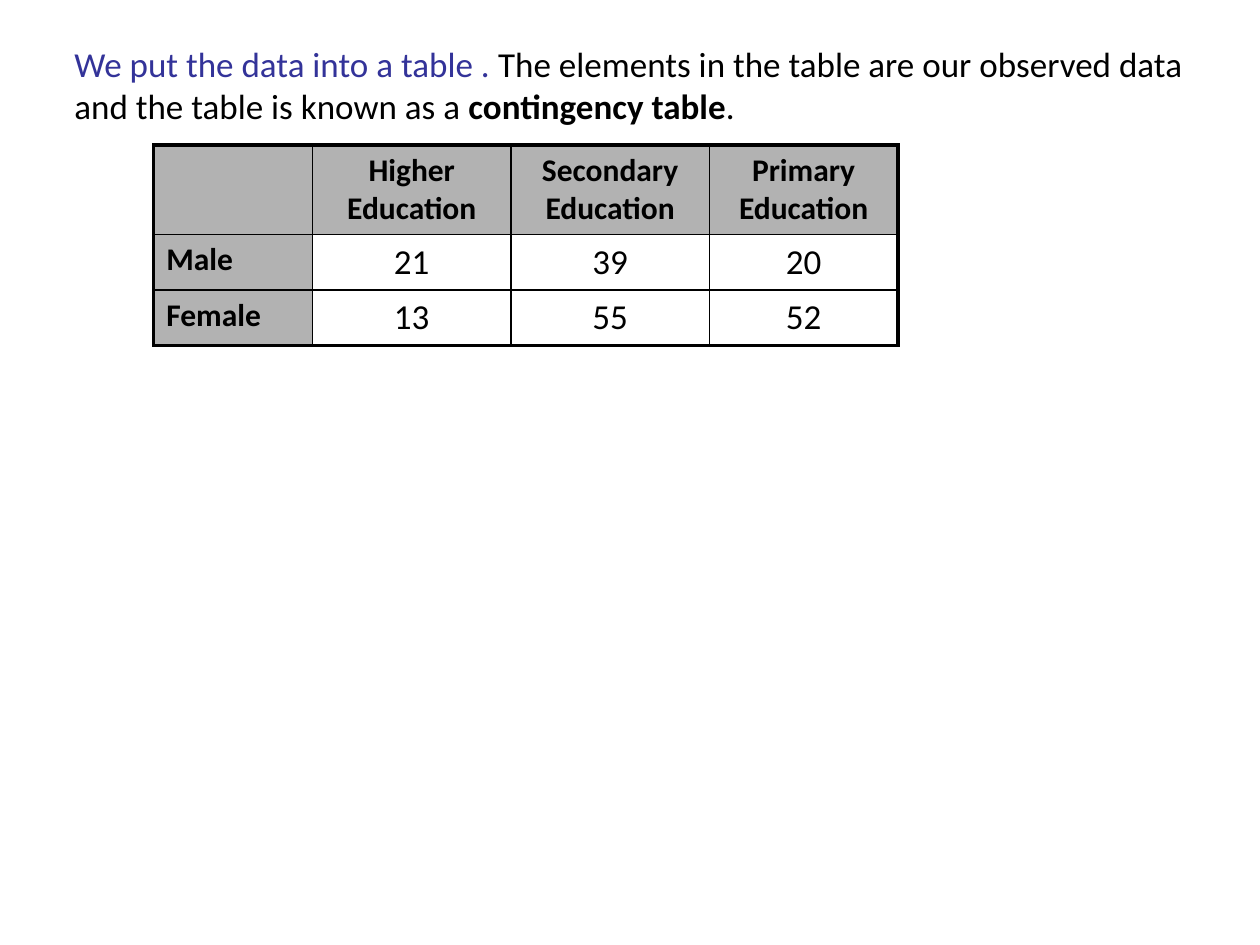
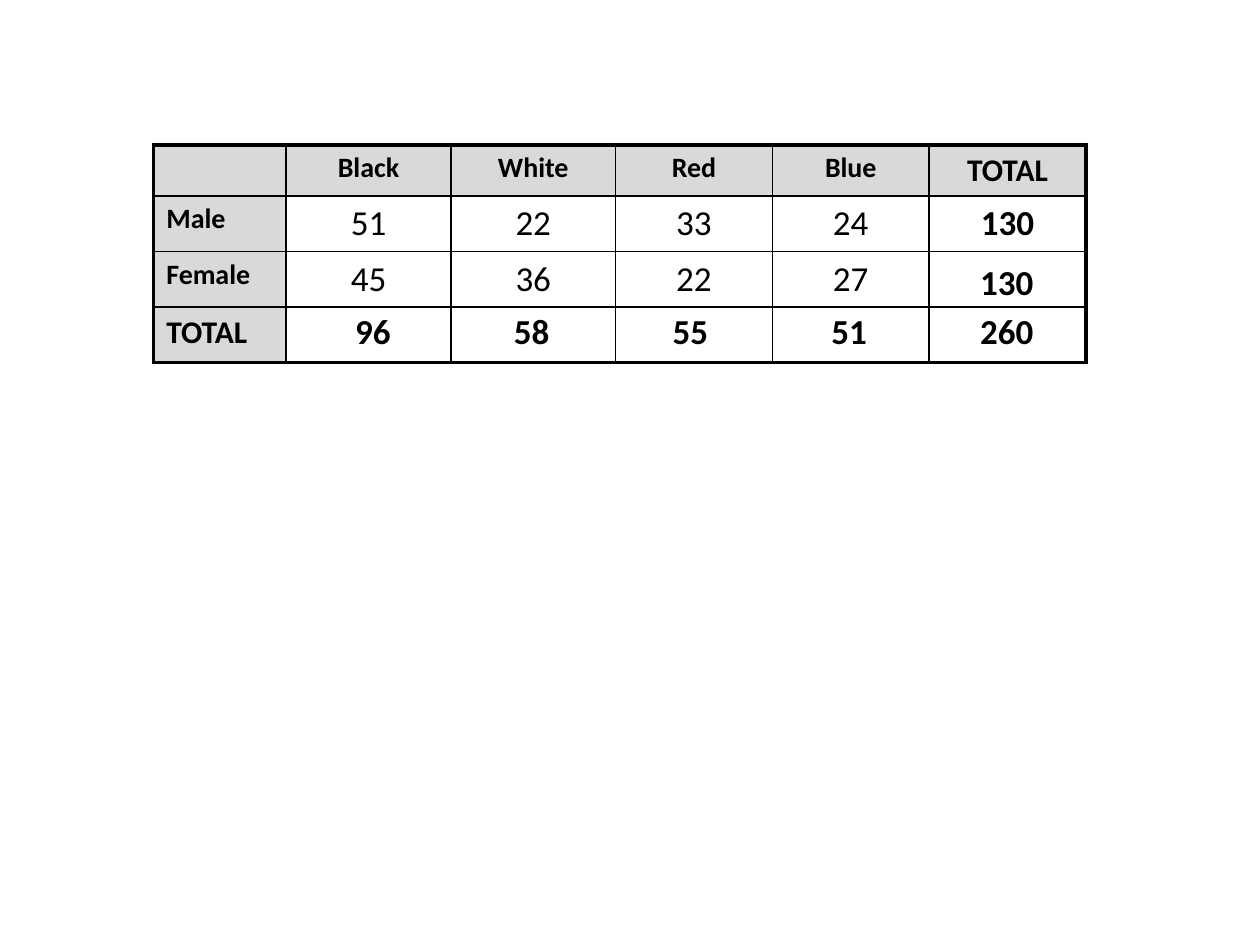
import pptx
import pptx.dml.color
import pptx.enum.text
import pptx.oxml.ns
import pptx.util
from lxml import etree

Cm = pptx.util.Cm
FONT = "Calibri"
HUES = {"ink": "000000", "lead": "333399", "dark": "B2B2B2", "pale": "D9D9D9"}
THIN, THICK = 1, 2.25
GRID = (3.1, 2.92)


def hue(name):
    """Return the named colour."""
    return pptx.dml.color.RGBColor.from_string(HUES[name])


def write(para, text, size=20, bold=False, color="ink", align="LEFT"):
    """Add a formatted run to a paragraph."""
    para.alignment = getattr(pptx.enum.text.PP_ALIGN, align)
    run = para.add_run()
    run.text = text
    run.font.name = FONT
    run.font.size = pptx.util.Pt(size)
    run.font.bold = bold
    run.font.color.rgb = hue(color)


def label(slide, left, top, width, height):
    """Add a text box and return its first paragraph."""
    box = slide.shapes.add_textbox(Cm(left), Cm(top), Cm(width), Cm(height))
    box.text_frame.word_wrap = True
    box.text_frame.auto_size = pptx.enum.text.MSO_AUTO_SIZE.SHAPE_TO_FIT_TEXT
    return box.text_frame.paragraphs[0]


def border(cell, sides):
    """Draw the left, right, top and bottom lines of a cell."""
    props = cell._tc.get_or_add_tcPr()
    for spot, (side, width) in enumerate(zip("LRTB", sides)):
        line = etree.Element(pptx.oxml.ns.qn("a:ln" + side), w=str(pptx.util.Pt(width)))
        fill = etree.SubElement(line, pptx.oxml.ns.qn("a:solidFill"))
        etree.SubElement(fill, pptx.oxml.ns.qn("a:srgbClr"), val=HUES["ink"])
        props.insert(spot, line)


def grid(slide, left, top, rows, widths, heights, shade, size):
    """Add a table with shaded heads and a thick outer frame."""
    frame = slide.shapes.add_table(len(rows), len(widths), Cm(left), Cm(top),
                                   Cm(sum(widths)), Cm(sum(heights)))
    table = frame.table
    table.first_row = table.horz_banding = False
    for col, width in zip(table.columns, widths):
        col.width = Cm(width)
    for row, height in zip(table.rows, heights):
        row.height = Cm(height)
    end, foot = len(widths) - 1, len(rows) - 1
    for y, row in enumerate(rows):
        for x, text in enumerate(row):
            cell = table.cell(y, x)
            head = x == 0 or y == 0
            if head:
                cell.fill.solid()
                cell.fill.fore_color.rgb = hue(shade)
            else:
                cell.fill.background()
            edges = (x == 0, x == end, y == 0, y == foot)
            border(cell, [THICK if edge else THIN for edge in edges])
            if text:
                points = 18 if text == "TOTAL" else size if head else 20
                write(cell.text_frame.paragraphs[0], text, size=points,
                      bold=head or rows[0][x] == "TOTAL",
                      align="CENTER" if x else "LEFT")


def intro(slide, left, top, width, height):
    """Add the sentence that explains the table."""
    para = label(slide, left, top, width, height)
    write(para, "We put the data into a table . ", color="lead")
    write(para, "The elements in the table are our observed data "
                "and the table is known as a ")
    write(para, "contingency table", bold=True)
    write(para, ".")


def sums(slide, left, top):
    """Add the totals that lie over the open cells of a table."""
    foot, edge = 3.2, 16.41
    spots = [(3.81 + 3.2 * i, foot, text)
             for i, text in enumerate(("96", "58", "55", "51"))]
    spots += [(edge, 2.21, "130"), (edge, foot, "260")]
    for x, y, text in spots:
        write(label(slide, left + x, top + y, 2.59, 1.09), text, bold=True)


def levels(slide):
    """Build the slide with counts by level of education."""
    rows = [["", "Higher Education", "Secondary Education", "Primary Education"],
            ["Male", "21", "39", "20"],
            ["Female", "13", "55", "52"]]
    grid(slide, *GRID, rows, [3.2, 4, 4, 3.8], [1.78, 1.1, 1.1], "dark", 18)
    intro(slide, 1.25, 0.73, 23.46, 1.96)


def colours(slide):
    """Build the slide with counts by colour and their totals."""
    rows = [["", "Black", "White", "Red", "Blue", "TOTAL"],
            ["Male", "51", "22", "33", "24", "130"],
            ["Female", "45", "36", "22", "27", ""],
            ["TOTAL", "", "", "", "", ""]]
    widths = [2.67] + [3.32] * 2 + [3.16] * 3
    grid(slide, *GRID, rows, widths, [1.03] + [1.12] * 3, "pale", 16)
    sums(slide, *GRID)


def main():
    """Build and save the deck."""
    deck = pptx.Presentation()
    deck.slide_width, deck.slide_height = Cm(25.4), Cm(19.05)
    for build in (levels, colours):
        build(deck.slides.add_slide(deck.slide_layouts[6]))
    deck.save("out.pptx")


if __name__ == "__main__":
    main()
